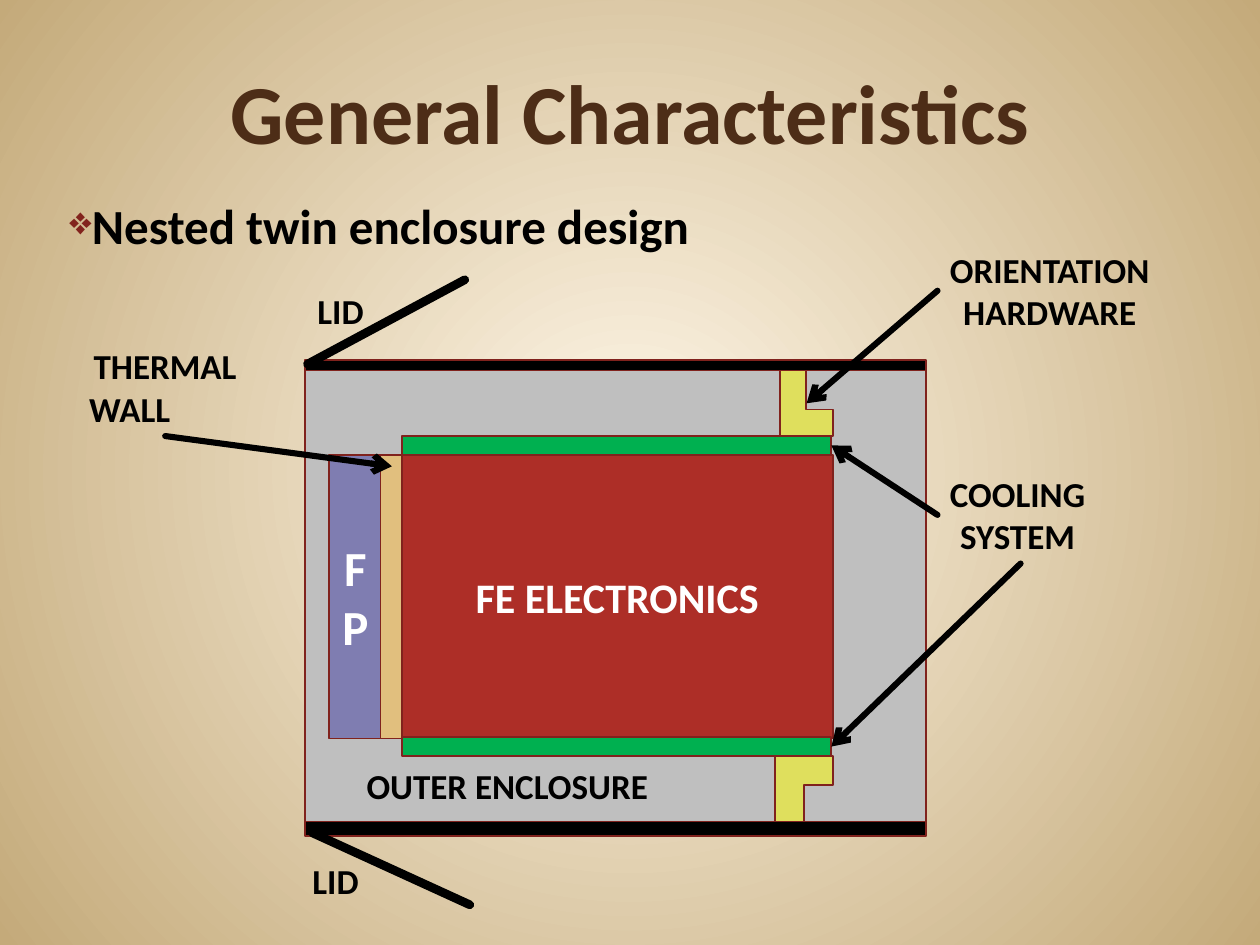
from typing import NamedTuple, Optional

from lxml import etree
from pptx import Presentation
from pptx import util as u
from pptx.dml.color import RGBColor
from pptx.enum import shapes, text
from pptx.oxml import parse_xml
from pptx.oxml.ns import nsdecls, qn

INK, WHITE, BORDER, GREEN = "000000", "FFFFFF", "80221D", "00B050"
TOP, LEFT, BOTTOM, RIGHT = range(4)


class Box(NamedTuple):
    left: float
    top: float
    width: float
    height: float

    def lengths(self) -> list:
        return [u.Cm(value) for value in self]


class Block(NamedTuple):
    box: Box
    fill: str
    caption: str = ""
    size: int = 24


class Label(NamedTuple):
    box: Box
    lines: tuple
    centred: Optional[int] = None


class Point(NamedTuple):
    x: float
    y: float


def paint(color_format, hex_code: str) -> None:
    color_format.rgb = RGBColor.from_string(hex_code)


def set_font(paragraph, size: int, hex_code: str) -> None:
    font = paragraph.font
    font.name, font.size, font.bold = "Calibri", u.Pt(size), True
    paint(font.color, hex_code)


def set_background(slide) -> None:
    slide.background.fill.solid()
    properties = slide.background._cSld.find(qn("p:bg")).find(qn("p:bgPr"))
    properties.replace(properties[0], parse_xml(
        f'<a:gradFill {nsdecls("a")} rotWithShape="1"><a:gsLst>'
        '<a:gs pos="0"><a:srgbClr val="FFF7E8"/></a:gs>'
        '<a:gs pos="100000"><a:srgbClr val="C4AA7A"/></a:gs></a:gsLst>'
        '<a:path path="circle"><a:fillToRect l="50000" t="50000" r="50000" b="50000"/>'
        '</a:path></a:gradFill>'))


def add_block(slide, block: Block):
    shape = slide.shapes.add_shape(shapes.MSO_SHAPE.RECTANGLE, *block.box.lengths())
    shape.shadow.inherit = False
    shape.fill.solid()
    paint(shape.fill.fore_color, block.fill)
    paint(shape.line.color, BORDER)
    shape.line.width = u.Pt(1)
    if block.caption:
        frame = shape.text_frame
        frame.text = block.caption
        frame.word_wrap = True
        frame.vertical_anchor = text.MSO_ANCHOR.MIDDLE
        frame.paragraphs[0].alignment = text.PP_ALIGN.CENTER
        set_font(frame.paragraphs[0], block.size, WHITE)
    return shape


def add_bracket(slide, box: Box, upside_down: bool = False) -> None:
    bracket = add_block(slide, Block(box, "FFFF00"))
    properties = bracket._element.spPr
    properties.find(qn("a:prstGeom")).set("prst", "corner")
    color = properties.find(qn("a:solidFill"))[0]
    etree.SubElement(color, qn("a:alpha"), val="51000")
    if upside_down:
        bracket.rotation = 180
        properties.find(qn("a:xfrm")).set("flipH", "1")


def add_label(slide, label: Label):
    shape = slide.shapes.add_textbox(*label.box.lengths())
    frame = shape.text_frame
    frame.text = "\n".join(label.lines)
    frame.word_wrap = False
    frame.auto_size = text.MSO_AUTO_SIZE.SHAPE_TO_FIT_TEXT
    for index, paragraph in enumerate(frame.paragraphs):
        if index == label.centred:
            paragraph.alignment = text.PP_ALIGN.CENTER
        set_font(paragraph, 20, INK)
    return shape


def add_line(slide, start: Point, end: Point, width: float, arrow: bool = False):
    line = slide.shapes.add_connector(
        shapes.MSO_CONNECTOR.STRAIGHT, *[u.Cm(value) for value in (*start, *end)])
    paint(line.line.color, INK)
    line.line.width = u.Pt(width)
    outline = line._element.spPr.find(qn("a:ln"))
    outline.set("cap", "rnd")
    if arrow:
        etree.SubElement(outline, qn("a:tailEnd"), type="arrow")
    etree.SubElement(line._element.spPr, qn("a:effectLst"))
    return line


def add_pointer(slide, label, side: int, start: Point, end: Point, target=None) -> None:
    pointer = add_line(slide, start, end, 3.5, arrow=True)
    pointer.begin_connect(label, side)
    if target is not None:
        pointer.end_connect(target, RIGHT)


def add_title(slide) -> None:
    frame = slide.shapes.add_textbox(*Box(1.27, 0.2, 22.86, 3.18).lengths()).text_frame
    frame.word_wrap = True
    frame.vertical_anchor = text.MSO_ANCHOR.BOTTOM
    frame.text = "General Characteristics"
    frame.paragraphs[0].alignment = text.PP_ALIGN.CENTER
    set_font(frame.paragraphs[0], 48, "4D2D17")


def add_design_point(slide) -> None:
    frame = slide.shapes.add_textbox(*Box(1.27, 3.81, 22.86, 12.57).lengths()).text_frame
    frame.word_wrap = True
    frame.margin_left = frame.margin_right = u.Cm(0.13)
    frame.margin_top = frame.margin_bottom = u.Cm(0.13)
    frame.text = "Nested twin enclosure design"
    paragraph = frame.paragraphs[0]
    properties = paragraph._p.get_or_add_pPr()
    properties.set("marL", "0")
    properties.set("indent", str(-u.Cm(0.76)))
    color = etree.SubElement(properties, qn("a:buClr"))
    etree.SubElement(color, qn("a:srgbClr"), val="82231D")
    etree.SubElement(properties, qn("a:buSzPct"), val="80000")
    etree.SubElement(properties, qn("a:buChar"), char="❖")
    set_font(paragraph, 28, INK)


def add_enclosure(slide) -> None:
    for block in (
        Block(Box(6.15, 7.26, 12.52, 9.6), INK),
        Block(Box(6.15, 7.47, 12.52, 9.09), "BFBFBF"),
        Block(Box(8.1, 9.17, 8.69, 5.72), "AD2E27", "FE ELECTRONICS"),
        Block(Box(6.63, 9.17, 1.07, 5.72), "7F7DB1", "FP", 28),
        Block(Box(7.67, 9.17, 0.43, 5.72), "E1BF7E"),
    ):
        add_block(slide, block)
    upper_cooler, lower_cooler = [
        add_block(slide, Block(Box(8.1, top, 8.66, 0.38), GREEN)) for top in (8.79, 14.86)]
    add_bracket(slide, Box(15.72, 7.47, 1.07, 1.32))
    add_bracket(slide, Box(15.62, 15.24, 1.17, 1.32), upside_down=True)

    add_line(slide, Point(6.2, 7.34), Point(9.37, 5.64), 5)
    add_line(slide, Point(6.3, 16.79), Point(9.47, 18.24), 5)

    add_label(slide, Label(Box(7.14, 15.29, 6.53, 1.12), ("OUTER ENCLOSURE",)))
    add_label(slide, Label(Box(6.15, 5.72, 1.52, 1.12), ("LID",)))
    add_label(slide, Label(Box(6.05, 17.2, 1.52, 1.12), ("LID",)))
    thermal = add_label(slide, Label(Box(1.55, 6.83, 3.56, 1.96), ("THERMAL", "WALL"), 0))
    cooling = add_label(slide, Label(Box(18.9, 9.4, 3.35, 1.96), ("COOLING", "SYSTEM"), 1))
    orientation = add_label(
        slide, Label(Box(18.9, 4.88, 4.8, 1.96), ("ORIENTATION", "HARDWARE"), 1))

    add_pointer(slide, thermal, BOTTOM, Point(3.33, 8.79), Point(7.9, 9.4))
    add_pointer(slide, orientation, LEFT, Point(18.9, 5.86), Point(16.26, 8.13))
    add_pointer(slide, cooling, LEFT, Point(18.9, 10.38), Point(16.76, 8.98), upper_cooler)
    add_pointer(slide, cooling, BOTTOM, Point(20.57, 11.36), Point(16.76, 15.05), lower_cooler)


def main() -> None:
    deck = Presentation()
    deck.slide_width, deck.slide_height = u.Cm(25.4), u.Cm(19.05)
    slide = deck.slides.add_slide(deck.slide_layouts[6])
    set_background(slide)
    add_title(slide)
    add_design_point(slide)
    add_enclosure(slide)
    deck.save("out.pptx")


if __name__ == "__main__":
    main()
